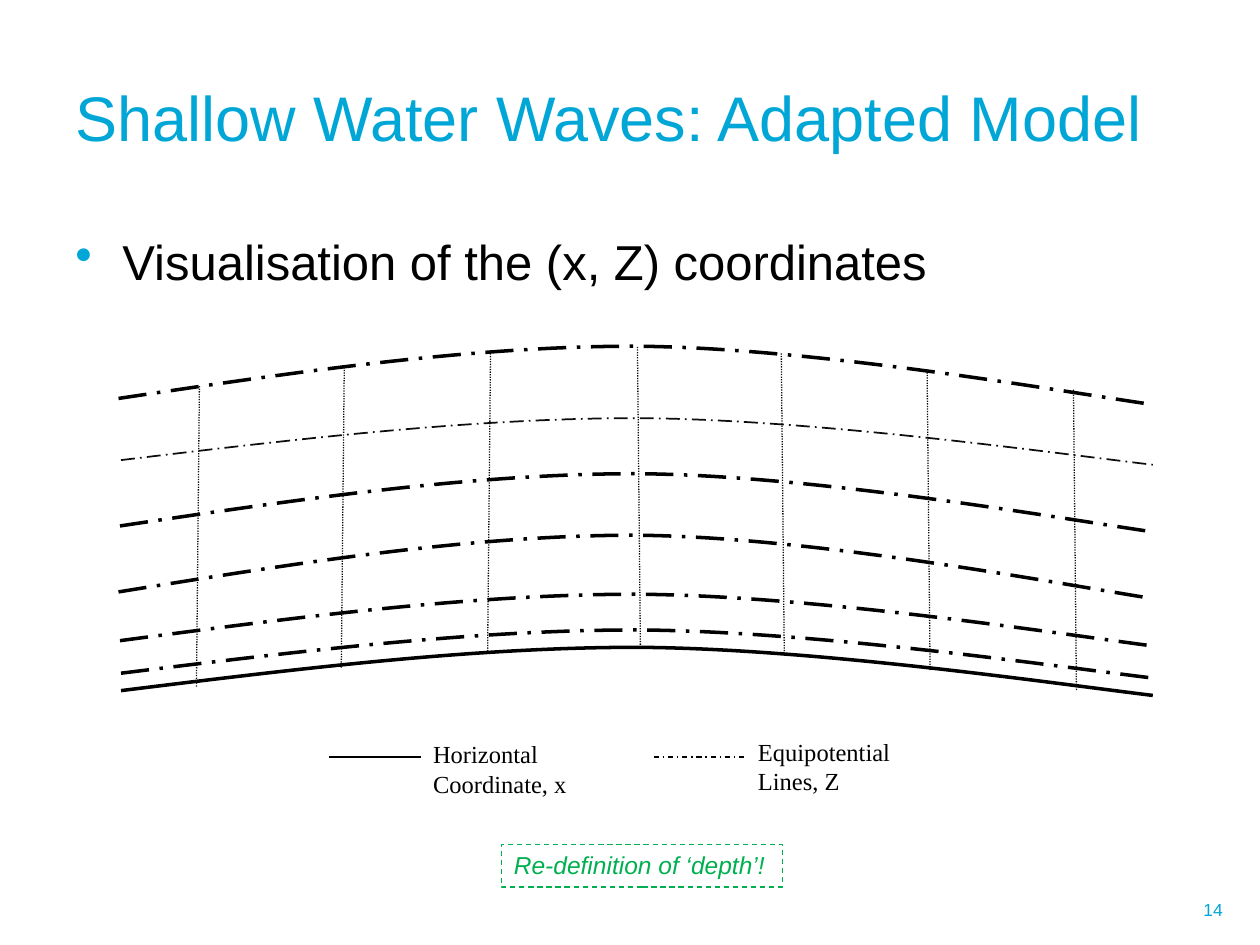
import dataclasses

import pptx
import pptx.dml.color
import pptx.enum.dml
import pptx.enum.shapes
import pptx.enum.text
import pptx.oxml.ns
import pptx.oxml.xmlchemy
import pptx.util

Cm = pptx.util.Cm
Pt = pptx.util.Pt
Dash = pptx.enum.dml.MSO_LINE
Anchor = pptx.enum.text.MSO_ANCHOR
Align = pptx.enum.text.PP_ALIGN
new_element = pptx.oxml.xmlchemy.OxmlElement


@dataclasses.dataclass(frozen=True)
class Theme:
    accent: str = "00A6D6"
    ink: str = "000000"
    soft_ink: str = "0D0D0D"
    note: str = "00B050"
    sans: str = "Arial"
    serif: str = "Times New Roman"
    title_size: int = 36
    body_size: int = 28
    label_size: int = 14
    number_size: int = 10
    bold_line: float = 2
    medium_line: float = 1
    thin_line: float = 0.75


@dataclasses.dataclass(frozen=True)
class Box:
    left: float
    top: float
    width: float
    height: float

    def emu(self):
        return [Cm(length) for length in dataclasses.astuple(self)]


THEME = Theme()
CURVE_X = (0, 0.17, 0.34, 0.5, 0.67, 0.9, 1)
CURVE_Y = (0.9, 0.45, 0, 0, 0.02, 0.74, 1)
EQUIPOTENTIALS = (
    (0, 0, 1.17),
    (0.05, 1.45, 0.94),
    (0.03, 2.57, 1.17),
    (0, 3.81, 1.27),
    (0.03, 5, 1.04),
    (0.05, 5.72, 0.97),
)
THIN_EQUIPOTENTIAL = 1
BED = (0.05, 6.07, 0.97)
CURVE_WIDTH = 20.8
VERTICALS = (
    (1.6, 0.79, 0.03),
    (4.52, 0.41, 0.03),
    (7.47, 0.08, 0.03),
    (10.49, 0, -0.03),
    (13.39, 0.13, -0.03),
    (16.33, 0.46, -0.03),
    (19.28, 0.86, -0.03),
)
VERTICAL_HEIGHT = 6.07


def rgb(color):
    return pptx.dml.color.RGBColor.from_string(color)


def style_line(line, color, width, dash=None):
    line.color.rgb = rgb(color)
    line.width = Pt(width)
    if dash is not None:
        line.dash_style = dash


def style_font(paragraph, font_name, size, color):
    font = paragraph.runs[0].font
    font.name = font_name
    font.size = Pt(size)
    font.color.rgb = rgb(color)
    return font


def add_label(slide, box, text, font_name, size, color, anchor=Anchor.TOP):
    label = slide.shapes.add_textbox(*box.emu())
    label.text_frame.word_wrap = True
    label.text_frame.vertical_anchor = anchor
    label.text_frame.text = text
    paragraph = label.text_frame.paragraphs[0]
    style_font(paragraph, font_name, size, color)
    return paragraph


def add_straight(slide, start, end, color, dash=None):
    straight = slide.shapes.add_connector(
        pptx.enum.shapes.MSO_CONNECTOR.STRAIGHT,
        *[Cm(length) for length in (*start, *end)])
    style_line(straight.line, color, THEME.thin_line, dash)
    straight._element.spPr.append(new_element("a:effectLst"))


def add_curve(slide, box, color, width, dash=None):
    points = [(Cm(box.left + x * box.width), Cm(box.top + y * box.height))
              for x, y in zip(CURVE_X, CURVE_Y)]
    builder = slide.shapes.build_freeform(*points[0])
    builder.add_line_segments(points[1:], close=False)
    curve = builder.convert_to_shape()
    outline = next(curve._element.iter(pptx.oxml.ns.qn("a:path")))
    segments = outline.findall(pptx.oxml.ns.qn("a:lnTo"))
    for first in range(0, len(segments), 3):
        bezier = new_element("a:cubicBezTo")
        for segment in segments[first:first + 3]:
            bezier.append(segment[0])
            outline.remove(segment)
        outline.append(bezier)
    curve.shadow.inherit = False
    curve.fill.background()
    style_line(curve.line, color, width, dash)


def add_title(slide, box):
    add_label(slide, box, "Shallow Water Waves: Adapted Model",
              THEME.sans, THEME.title_size, THEME.accent, Anchor.MIDDLE)


def add_body(slide, box):
    bullet_line = add_label(slide, box, "Visualisation of the (x, Z) coordinates",
                            THEME.sans, THEME.body_size, THEME.ink)
    properties = bullet_line._p.get_or_add_pPr()
    properties.set("marL", str(Cm(0.95)))
    properties.set("indent", str(-Cm(0.95)))
    bullet_color = new_element("a:buClr")
    accent = new_element("a:srgbClr")
    accent.set("val", THEME.accent)
    bullet_color.append(accent)
    bullet = new_element("a:buChar")
    bullet.set("char", "•")
    properties.extend([bullet_color, bullet])


def add_coordinate_plot(slide, box):
    def curve_box(left, top, height):
        return Box(box.left + left, box.top + top, CURVE_WIDTH, height)

    add_curve(slide, curve_box(*BED), THEME.ink, THEME.bold_line)
    for index, placement in enumerate(EQUIPOTENTIALS):
        thin = index == THIN_EQUIPOTENTIAL
        add_curve(slide, curve_box(*placement),
                  THEME.soft_ink if thin else THEME.ink,
                  THEME.medium_line if thin else THEME.bold_line,
                  Dash.LONG_DASH_DOT)
    for x, top, lean in VERTICALS:
        middle, upper = box.left + x, box.top + top
        add_straight(slide, (middle - lean, upper + VERTICAL_HEIGHT),
                     (middle + lean, upper), THEME.soft_ink, Dash.ROUND_DOT)


def add_legend(slide, box):
    entries = (("Horizontal Coordinate, x", None, 0.05),
               ("Equipotential Lines, Z", Dash.DASH_DOT, 0))
    for index, (text, dash, drop) in enumerate(entries):
        left, middle = box.left + index * 6.55, box.top + 0.53
        add_straight(slide, (left, middle), (left + 1.85, middle), THEME.ink, dash)
        add_label(slide, Box(left + 1.85, box.top + drop, 4.06, box.height),
                  text, THEME.serif, THEME.label_size, THEME.ink)


def add_depth_note(slide, box):
    note = slide.shapes.add_shape(pptx.enum.shapes.MSO_SHAPE.RECTANGLE, *box.emu())
    note.shadow.inherit = False
    note.fill.background()
    style_line(note.line, THEME.note, THEME.thin_line, Dash.DASH)
    note.text_frame.vertical_anchor = Anchor.TOP
    note.text_frame.text = "Re-definition of ‘depth’!"
    paragraph = note.text_frame.paragraphs[0]
    paragraph.alignment = Align.LEFT
    style_font(paragraph, THEME.sans, THEME.label_size, THEME.note).italic = True


def add_slide_number(slide, box):
    number = add_label(slide, box, "14", THEME.sans, THEME.number_size,
                       THEME.accent, Anchor.MIDDLE)
    number.alignment = Align.RIGHT


def main():
    deck = pptx.Presentation()
    deck.slide_width, deck.slide_height = Cm(25.4), Cm(19.05)
    slide = deck.slides.add_slide(deck.slide_layouts[6])
    add_slide_number(slide, Box(18.47, 17.83, 6.43, 1.02))
    add_title(slide, Box(1.27, 0.76, 23.22, 3.18))
    add_body(slide, Box(1.27, 4.54, 23.22, 12.57))
    add_coordinate_plot(slide, Box(2.39, 6.98, 20.85, 7.04))
    add_legend(slide, Box(6.63, 14.73, 12.46, 1.65))
    add_depth_note(slide, Box(10.11, 17.02, 5.66, 0.86))
    deck.save("out.pptx")


if __name__ == "__main__":
    main()
